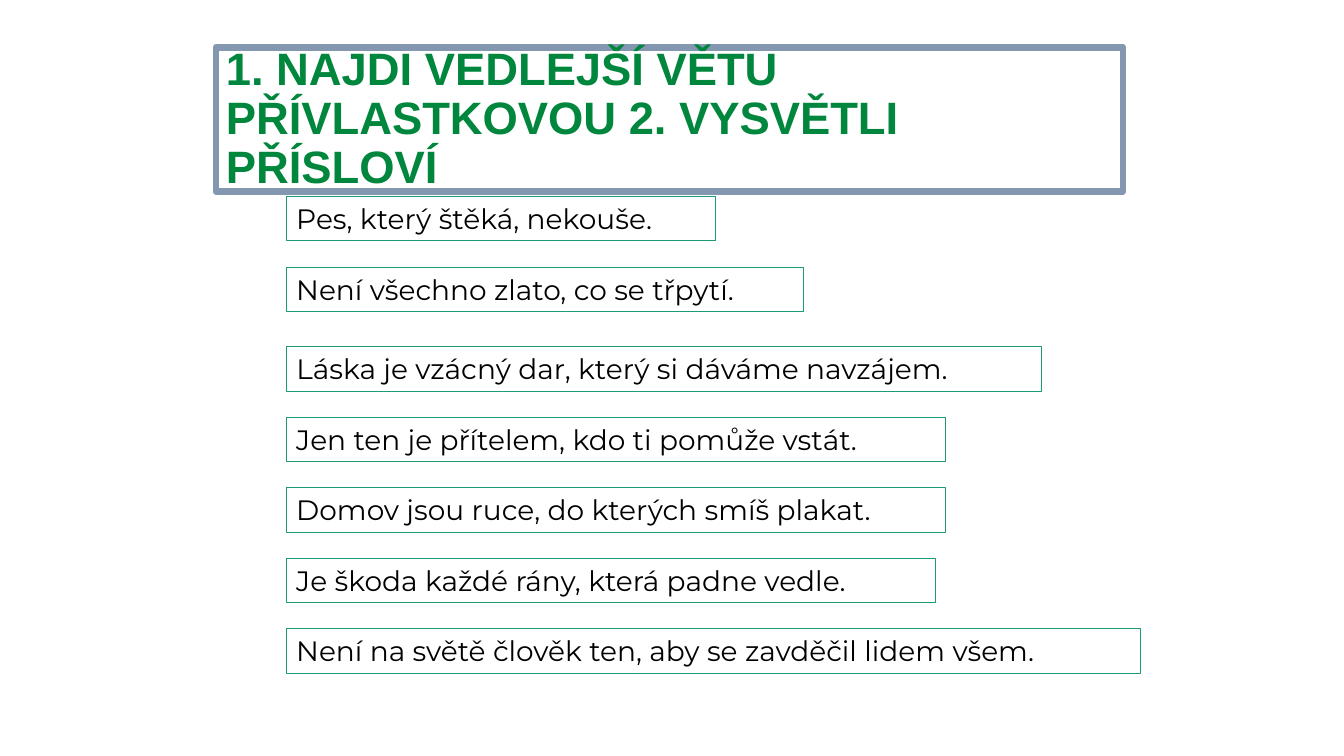
"""Build a Czech grammar slide with a framed title and seven boxed proverbs."""
from dataclasses import dataclass

from pptx import Presentation
from pptx.dml.color import RGBColor
from pptx.enum import text as t
from pptx.util import Inches, Pt


@dataclass(frozen=True)
class Theme:
    head: str = "00863D"
    frame: str = "8497B0"
    edge: str = "1D9A78"
    ink: str = "000000"
    head_font: str = "Arial"
    body_font: str = "Montserrat"
    head_size: float = 32.4
    body_size: float = 20
    frame_width: float = 4.5
    edge_width: float = 0.75


THEME = Theme()
LEFT, HEIGHT, STEP = 2.84, 0.44, 0.7
GROUPS = [
    (1.95, [
        ("Pes, který štěká, nekouše.", 4.26),
        ("Není všechno zlato, co se třpytí.", 5.13),
    ]),
    (3.44, [
        ("Láska je vzácný dar, který si dáváme navzájem.", 7.49),
        ("Jen ten je přítelem, kdo ti pomůže vstát.", 6.54),
        ("Domov jsou ruce, do kterých smíš plakat.", 6.54),
        ("Je škoda každé rány, která padne vedle.", 6.44),
        ("Není na světě člověk ten, aby se zavděčil lidem všem.", 8.47),
    ]),
]


def outline(shape, color, width):
    shape.line.color.rgb = RGBColor.from_string(color)
    shape.line.width = Pt(width)


def write(shape, words, name, size, color, anchor):
    frame = shape.text_frame
    frame.text = words
    frame.word_wrap = True
    frame.auto_size = t.MSO_AUTO_SIZE.NONE
    frame.vertical_anchor = anchor
    para = frame.paragraphs[0]
    para.alignment = t.PP_ALIGN.LEFT
    para.font.name = name
    para.font.size = Pt(size)
    para.font.color.rgb = RGBColor.from_string(color)
    return para


def add_title(slide, words):
    title = slide.shapes.title
    title.left, title.top = Inches(2.14), Inches(0.47)
    title.width, title.height = Inches(9), Inches(1.43)
    outline(title, THEME.frame, THEME.frame_width)
    para = write(title, words, THEME.head_font, THEME.head_size,
                 THEME.head, t.MSO_ANCHOR.MIDDLE)
    para.font.bold = True
    para.line_spacing = 0.9


def add_proverb(slide, words, top, width):
    box = slide.shapes.add_textbox(
        Inches(LEFT), Inches(top), Inches(width), Inches(HEIGHT))
    outline(box, THEME.edge, THEME.edge_width)
    write(box, words, THEME.body_font, THEME.body_size,
          THEME.ink, t.MSO_ANCHOR.TOP)


def main():
    deck = Presentation()
    deck.slide_width, deck.slide_height = Inches(13.33), Inches(7.5)
    slide = deck.slides.add_slide(deck.slide_layouts[5])
    add_title(slide, "1. NAJDI VEDLEJŠÍ VĚTU PŘÍVLASTKOVOU 2. VYSVĚTLI PŘÍSLOVÍ")
    for start, proverbs in GROUPS:
        for row, (words, width) in enumerate(proverbs):
            add_proverb(slide, words, start + row * STEP, width)
    deck.save("out.pptx")


if __name__ == "__main__":
    main()
